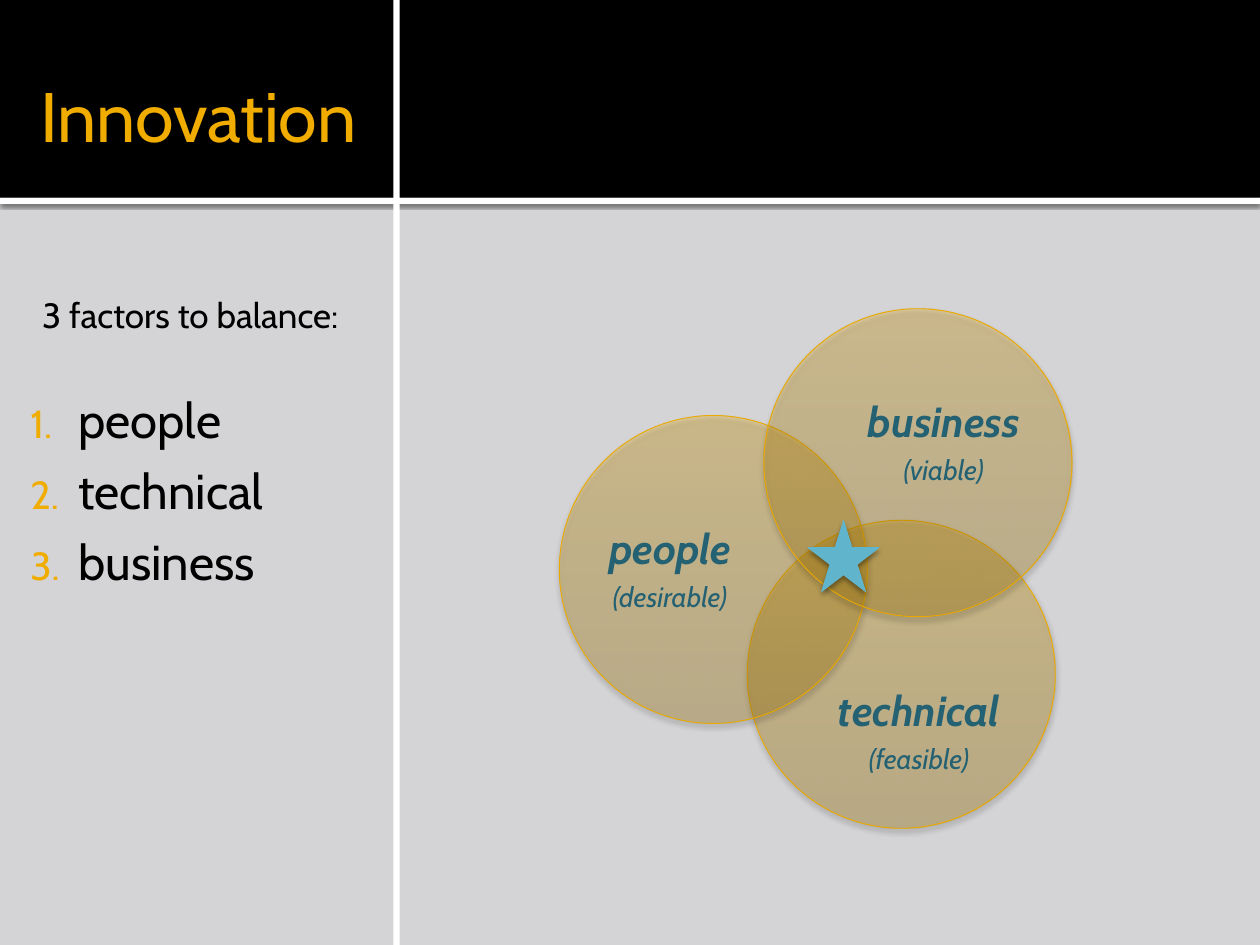
from pptx import Presentation, oxml
from pptx.dml import color
from pptx.enum import shapes, text
from pptx.oxml import ns
from pptx.util import Pt

GOLD, TEAL, SKY = "F0AD00", "246172", "60B5CC"
BLACK, WHITE, GREY = "000000", "FFFFFF", "D4D4D6"
CENTER = text.PP_ALIGN.CENTER


def rgb(value):
    """Turn a hex string into a colour."""
    return color.RGBColor.from_string(value)


def xml(body):
    """Parse a DrawingML fragment."""
    head, rest = body.split(" ", 1)
    return oxml.parse_xml(f"{head} {ns.nsdecls('a')} {rest}")


def stop(pos, value, alpha):
    """Describe one translucent gradient stop."""
    return (f'<a:gs pos="{pos * 1000}"><a:srgbClr val="{value}">'
            f'<a:alpha val="{alpha * 1000}"/></a:srgbClr></a:gs>')


def add_shadow(sp, alpha, blur, dist):
    """Give a shape a soft shadow straight below it."""
    sp.shadow.inherit = False
    effects = sp.element.spPr.find(ns.qn("a:effectLst"))
    effects.append(xml(
        f'<a:outerShdw blurRad="{Pt(blur)}" dist="{Pt(dist)}" dir="5400000" '
        f'rotWithShape="0"><a:srgbClr val="{BLACK}">'
        f'<a:alpha val="{alpha * 1000}"/></a:srgbClr></a:outerShdw>'))


def add_solid(s, kind, box, fill, line=None):
    """Add a plain filled shape without a shadow."""
    sp = s.shapes.add_shape(kind, *map(Pt, box))
    sp.shadow.inherit = False
    sp.fill.solid()
    sp.fill.fore_color.rgb = rgb(fill)
    if line:
        sp.line.color.rgb = rgb(line)
        sp.line.width = Pt(0.5)
    else:
        sp.line.fill.background()
    return sp


def add_circle(s, left, top, alpha, size=176):
    """Add one translucent circle of the Venn diagram."""
    sp = add_solid(s, shapes.MSO_SHAPE.OVAL, (left, top, size, size), GOLD, "EBA900")
    stops = ((0, "AE7D00"), (55, "CC9300"), (100, "EEAB00"))
    gradient = xml('<a:gradFill rotWithShape="1"><a:gsLst>'
                   + "".join(stop(pos, value, alpha) for pos, value in stops)
                   + '</a:gsLst><a:lin ang="16200000" scaled="0"/></a:gradFill>')
    sp_pr = sp.element.spPr
    sp_pr.replace(sp_pr.find(ns.qn("a:solidFill")), gradient)
    add_shadow(sp, 38, 3.1, 2)


def style(p, size, fill, bold=False, italic=False):
    """Format all runs of a paragraph."""
    for r in p.runs:
        r.font.name, r.font.size = "Cabin", Pt(size)
        r.font.bold, r.font.italic = bold, italic
        r.font.color.rgb = rgb(fill)


def add_label(s, left, top, name, quality):
    """Add a factor name with its quality below."""
    tf = s.shapes.add_textbox(*map(Pt, (left, top, 126.7, 65))).text_frame
    tf.word_wrap = True
    tf.text = f"{name}\n({quality})"
    for p, size, bold in zip(tf.paragraphs, (24, 16), (True, False)):
        p.alignment, p.line_spacing = CENTER, 1.2
        style(p, size, TEAL, bold, True)


def place(s, sp, box, insets):
    """Move a placeholder to the front and set its frame."""
    s.shapes.element.append(sp.element)
    sp.left, sp.top, sp.width, sp.height = map(Pt, box)
    tf = sp.text_frame
    tf.word_wrap, tf.auto_size = True, text.MSO_AUTO_SIZE.NONE
    tf.margin_left, tf.margin_top, tf.margin_right, tf.margin_bottom = map(Pt, insets)
    return tf


def fill_title(s, title):
    """Write the slide title."""
    tf = place(s, s.shapes.title, (13, 12.2, 198.7, 77), (5.8, 3.6, 3.6, 0))
    tf.vertical_anchor = text.MSO_ANCHOR.BOTTOM
    tf.text = title
    tf.paragraphs[0].alignment = CENTER
    style(tf.paragraphs[0], 40, GOLD)


def fill_body(s, intro, items):
    """Write the introduction and the numbered list."""
    tf = place(s, s.placeholders[1], (13, 160.4, 194.4, 335.6), (4.3, 7.2, 7.2, 3.6))
    tf.vertical_anchor = text.MSO_ANCHOR.TOP
    tf.text = "\n".join((intro, *items))
    for i, p in enumerate(tf.paragraphs):
        p.space_before = Pt(24.5 if i == 1 else 0)
        p.space_after = Pt(0)
        p.line_spacing = 1.2 if i else 1.0
        p.alignment = text.PP_ALIGN.LEFT if i else CENTER
        style(p, 28 if i else 20, BLACK)
        indent = Pt(27.4) if i else 0
        p_pr = p._p.get_or_add_pPr()
        p_pr.set("marL", str(indent))
        p_pr.set("indent", str(-indent))
        if i:
            p_pr.append(xml(f'<a:buClr ><a:srgbClr val="{GOLD}"/></a:buClr>'))
            p_pr.append(xml('<a:buSzPct val="80000"/>'))
            p_pr.append(xml('<a:buFont typeface="Cabin"/>'))
            p_pr.append(xml('<a:buAutoNum type="arabicPeriod"/>'))
        else:
            p_pr.append(xml("<a:buNone />"))


def main():
    """Build the slide and save it."""
    prs = Presentation()
    prs.slide_width, prs.slide_height = Pt(720), Pt(540)
    s = prs.slides.add_slide(prs.slide_layouts[1])
    s.background.fill.solid()
    s.background.fill.fore_color.rgb = rgb(GREY)

    rect = shapes.MSO_SHAPE.RECTANGLE
    rule = add_solid(s, rect, (0, 113, 720, 3.6), WHITE)
    add_shadow(rule, 60, 2.5, 0.8)
    add_solid(s, rect, (0, 0, 720, 113), BLACK)
    add_solid(s, rect, (224.8, 0, 3.6, 540), WHITE)

    fill_title(s, "Innovation")
    fill_body(s, "3 factors to balance:", ("people", "technical", "business"))

    for left, top, alpha in ((427, 297.3, 29), (319.6, 237.4, 28), (436.5, 176.4, 27)):
        add_circle(s, left, top, alpha)
    star = add_solid(s, shapes.MSO_SHAPE.STAR_5_POINT, (461.8, 297.5, 40.5, 40.5), SKY, SKY)
    add_shadow(star, 38, 3.1, 2)

    for label in ((319.6, 289.4, "people", "desirable"),
                  (461.8, 381.8, "technical", "feasible"),
                  (475.9, 216.7, "business", "viable")):
        add_label(s, *label)
    prs.save("out.pptx")


if __name__ == "__main__":
    main()
